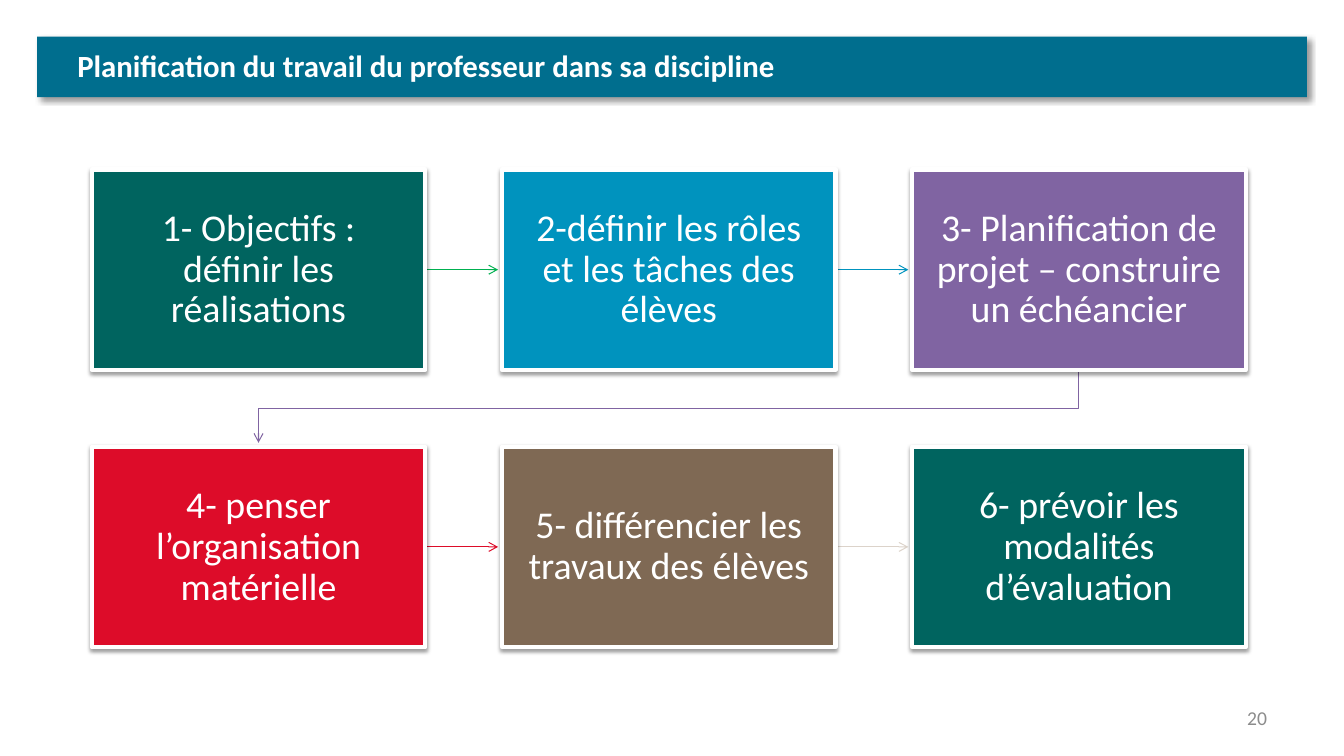
"""Build a slide showing the six planning steps of a teacher's work."""
from lxml.etree import SubElement
from pptx import Presentation
from pptx.dml.color import RGBColor
from pptx.enum.shapes import MSO_CONNECTOR, MSO_SHAPE
from pptx.enum.text import MSO_ANCHOR, PP_ALIGN
from pptx.oxml import parse_xml
from pptx.oxml.ns import nsdecls, qn
from pptx.util import Pt

WHITE = RGBColor(0xFF, 0xFF, 0xFF)
GREY = RGBColor(0x8C, 0x8C, 0x8C)
BANNER_BLUE = RGBColor(0x00, 0x6E, 0x8E)
DARK_GREEN = RGBColor(0x00, 0x64, 0x5F)
GREEN = RGBColor(0x00, 0xB0, 0x50)
BLUE = RGBColor(0x00, 0x93, 0xBE)
PURPLE = RGBColor(0x80, 0x64, 0xA2)
RED = RGBColor(0xDD, 0x0C, 0x29)
BROWN = RGBColor(0x7F, 0x69, 0x54)
BEIGE = RGBColor(0xDC, 0xD3, 0xCA)

STEPS = [
    ("1- Objectifs : définir les réalisations", DARK_GREEN, GREEN),
    ("2-définir les rôles et les tâches des élèves", BLUE, BLUE),
    ("3- Planification de projet – construire un échéancier", PURPLE, PURPLE),
    ("4- penser l’organisation matérielle", RED, RED),
    ("5- différencier les travaux des élèves", BROWN, BEIGE),
    ("6- prévoir les modalités d’évaluation", DARK_GREEN, None),
]
COLUMNS = 3
LEFT, TOP = 65.5, 121
WIDTH, HEIGHT = 238.3, 143.3
COLUMN_STEP, ROW_STEP = 293, 198
ARROW_LENGTH = 52


def add_shadow(shape, opacity, blur, distance, angle):
    shape.shadow.inherit = False
    effects = shape.element.spPr.find(qn("a:effectLst"))
    effects.append(parse_xml(
        f'<a:outerShdw {nsdecls("a")} blurRad="{Pt(blur)}" dist="{Pt(distance)}" '
        f'dir="{angle * 60000}" algn="ctr" rotWithShape="0"><a:srgbClr val="000000">'
        f'<a:alpha val="{opacity * 1000}"/></a:srgbClr></a:outerShdw>'))


def style_arrow(arrow, color):
    arrow.line.color.rgb = color
    arrow.line.width = Pt(0.75)
    SubElement(arrow.line._get_or_add_ln(), qn("a:tailEnd"), type="arrow")


deck = Presentation()
deck.slide_width, deck.slide_height = Pt(960), Pt(540)
page = deck.slides.add_slide(deck.slide_layouts[6])

banner = page.shapes.add_shape(MSO_SHAPE.RECTANGLE, Pt(26.6), Pt(26.2), Pt(907), Pt(43.2))
banner.fill.solid()
banner.fill.fore_color.rgb = BANNER_BLUE
banner.line.fill.background()
add_shadow(banner, 40, 4, 3, 45)

labels = [
    ("Planification du travail du professeur dans sa discipline",
     (48.2, 29.5, 864, 82), 22, WHITE, True, PP_ALIGN.LEFT),
    ("20", (865.4, 500.4, 46.8, 28.8), 14, GREY, False, PP_ALIGN.RIGHT),
]
for text, place, size, color, bold, alignment in labels:
    box = page.shapes.add_textbox(*map(Pt, place))
    box.text_frame.word_wrap = True
    box.text_frame.text = text
    para = box.text_frame.paragraphs[0]
    para.alignment = alignment
    span = para.runs[0]
    span.font.name = "Calibri"
    span.font.size = Pt(size)
    span.font.bold = bold
    span.font.color.rgb = color

for index, (text, fill_color, arrow_color) in enumerate(STEPS):
    row, column = divmod(index, COLUMNS)
    left = LEFT + column * COLUMN_STEP
    top = TOP + row * ROW_STEP
    right, bottom = left + WIDTH, top + HEIGHT

    if index == len(STEPS) - 1:
        pass
    elif column < COLUMNS - 1:
        middle = Pt(top + HEIGHT / 2)
        arrow = page.shapes.add_connector(
            MSO_CONNECTOR.STRAIGHT, Pt(right), middle, Pt(right + ARROW_LENGTH), middle)
        SubElement(arrow.element.spPr, qn("a:effectLst"))
        style_arrow(arrow, arrow_color)
    else:
        start_x, end_x = Pt(left + WIDTH / 2), Pt(LEFT + WIDTH / 2)
        turn_y = Pt((bottom + top + ROW_STEP) / 2)
        outline = page.shapes.build_freeform(start_x, Pt(bottom))
        outline.add_line_segments(
            [(start_x, turn_y), (end_x, turn_y), (end_x, Pt(bottom + ARROW_LENGTH))],
            close=False)
        arrow = outline.convert_to_shape()
        arrow.fill.background()
        arrow.shadow.inherit = False
        style_arrow(arrow, arrow_color)

    card = page.shapes.add_shape(MSO_SHAPE.RECTANGLE, Pt(left), Pt(top), Pt(WIDTH), Pt(HEIGHT))
    card.fill.solid()
    card.fill.fore_color.rgb = fill_color
    card.line.color.rgb = WHITE
    card.line.width = Pt(3)
    add_shadow(card, 38, 3.1, 1.6, 90)
    frame = card.text_frame
    frame.word_wrap = True
    frame.vertical_anchor = MSO_ANCHOR.MIDDLE
    frame.margin_left = frame.margin_right = Pt(15)
    frame.margin_top = frame.margin_bottom = Pt(15)
    frame.text = text
    para = frame.paragraphs[0]
    para.alignment = PP_ALIGN.CENTER
    para.line_spacing = 0.9
    span = para.runs[0]
    span.font.name = "Calibri"
    span.font.size = Pt(27)
    span.font.color.rgb = WHITE

deck.save("out.pptx")
